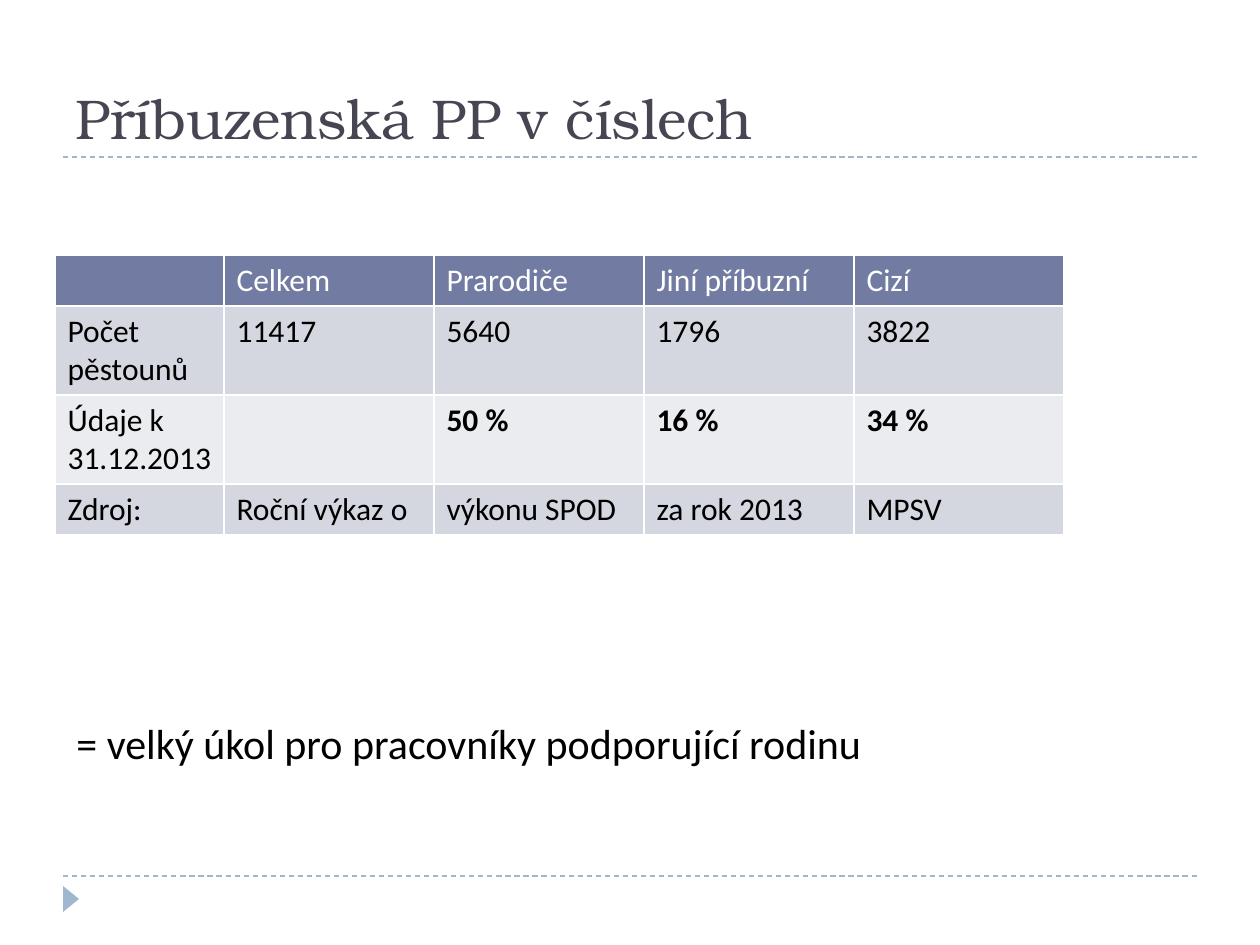
import pptx
import pptx.dml.color
import pptx.enum.dml
import pptx.enum.shapes
import pptx.enum.text
import pptx.oxml.ns
import pptx.util
from lxml import etree

EMU_PER_PX = 914400 / 126
COLORS = {
    "title": "464653",
    "accent": "9FB8CD",
    "header": "727CA3",
    "band_dark": "D5D7E0",
    "band_light": "EBECF0",
    "white": "FFFFFF",
    "black": "000000",
}


def px(length):
    return pptx.util.Emu(round(length * EMU_PER_PX))


def color(name):
    return pptx.dml.color.RGBColor.from_string(COLORS[name])


def write(text_frame, text, size=18, font="Calibri", fill="black", bold=False):
    paragraph = text_frame.paragraphs[0]
    paragraph.font.size = pptx.util.Pt(size)
    if text:
        run = paragraph.add_run()
        run.text = text
        run.font.size = pptx.util.Pt(size)
        run.font.name = font
        run.font.bold = bold
        run.font.color.rgb = color(fill)


class SlideBuilder:
    border_width = pptx.util.Pt(1)
    rule_width = pptx.util.Pt(0.75)

    def __init__(self, slide):
        self.slide = slide

    def rule(self, left, right, y):
        line = self.slide.shapes.add_connector(
            pptx.enum.shapes.MSO_CONNECTOR.STRAIGHT, px(left), px(y), px(right), px(y))
        line.line.color.rgb = color("accent")
        line.line.width = self.rule_width
        line.line.dash_style = pptx.enum.dml.MSO_LINE.DASH
        properties = line._element.spPr
        etree.SubElement(properties, pptx.oxml.ns.qn("a:effectLst"))

    def triangle(self, left, top, width, height, rotation):
        shape = self.slide.shapes.add_shape(
            pptx.enum.shapes.MSO_SHAPE.ISOSCELES_TRIANGLE,
            px(left), px(top), px(width), px(height))
        shape.rotation = rotation
        shape.shadow.inherit = False
        shape.fill.solid()
        shape.fill.fore_color.rgb = color("accent")
        shape.line.fill.background()

    def text(self, left, top, width, height, text, anchor="TOP", **text_format):
        box = self.slide.shapes.add_textbox(px(left), px(top), px(width), px(height))
        box.text_frame.word_wrap = True
        box.text_frame.vertical_anchor = pptx.enum.text.MSO_ANCHOR[anchor]
        write(box.text_frame, text, **text_format)

    def borders(self, cell):
        properties = cell._tc.get_or_add_tcPr()
        for index, side in enumerate(("lnL", "lnR", "lnT", "lnB")):
            line = etree.Element(pptx.oxml.ns.qn("a:" + side), w=str(self.border_width))
            fill = etree.SubElement(line, pptx.oxml.ns.qn("a:solidFill"))
            etree.SubElement(fill, pptx.oxml.ns.qn("a:srgbClr"), val=COLORS["white"])
            properties.insert(index, line)

    def table(self, left, top, widths, heights, rows):
        frame = self.slide.shapes.add_table(
            len(rows), len(widths), px(left), px(top), px(sum(widths)), px(sum(heights)))
        table = frame.table
        for column, width in zip(table.columns, widths):
            column.width = px(width)
        for row, height, (fill, text_format, texts) in zip(table.rows, heights, rows):
            row.height = px(height)
            for index, (cell, text) in enumerate(zip(row.cells, texts)):
                cell.fill.solid()
                cell.fill.fore_color.rgb = color(fill)
                # Row labels in the first column stay regular
                cell_format = text_format if index else {**text_format, "bold": False}
                write(cell.text_frame, text, **cell_format)
                self.borders(cell)


def main():
    presentation = pptx.Presentation()
    presentation.slide_width = px(1260)
    presentation.slide_height = px(945)
    builder = SlideBuilder(presentation.slides.add_slide(presentation.slide_layouts[6]))

    # Frame of the slide
    for y in (876, 157):
        builder.rule(63, 1197, y)
    builder.triangle(58, 891, 26, 16, rotation=90)

    # Title
    builder.text(63, 21, 1134, 136, "Příbuzenská PP v číslech", anchor="BOTTOM",
                 size=32, font="TeX Gyre Bonum", fill="title")

    # Foster carer counts
    rows = [
        ("header", {"fill": "white"},
         ["", "Celkem", "Prarodiče", "Jiní příbuzní", "Cizí"]),
        ("band_dark", {}, ["Počet pěstounů", "11417", "5640", "1796", "3822"]),
        ("band_light", {"bold": True},
         ["Údaje k 31.12.2013", "", "50 %", "16 %", "34 %"]),
        ("band_dark", {},
         ["Zdroj:", "Roční výkaz o", "výkonu SPOD", "za rok 2013", "MPSV"]),
    ]
    builder.table(55, 255, [169] + [210] * 4, [51, 89, 89, 51], rows)

    # Conclusion
    builder.text(64, 711, 1002, 63, "= velký úkol pro pracovníky podporující rodinu", size=24)

    presentation.save("out.pptx")


if __name__ == "__main__":
    main()
